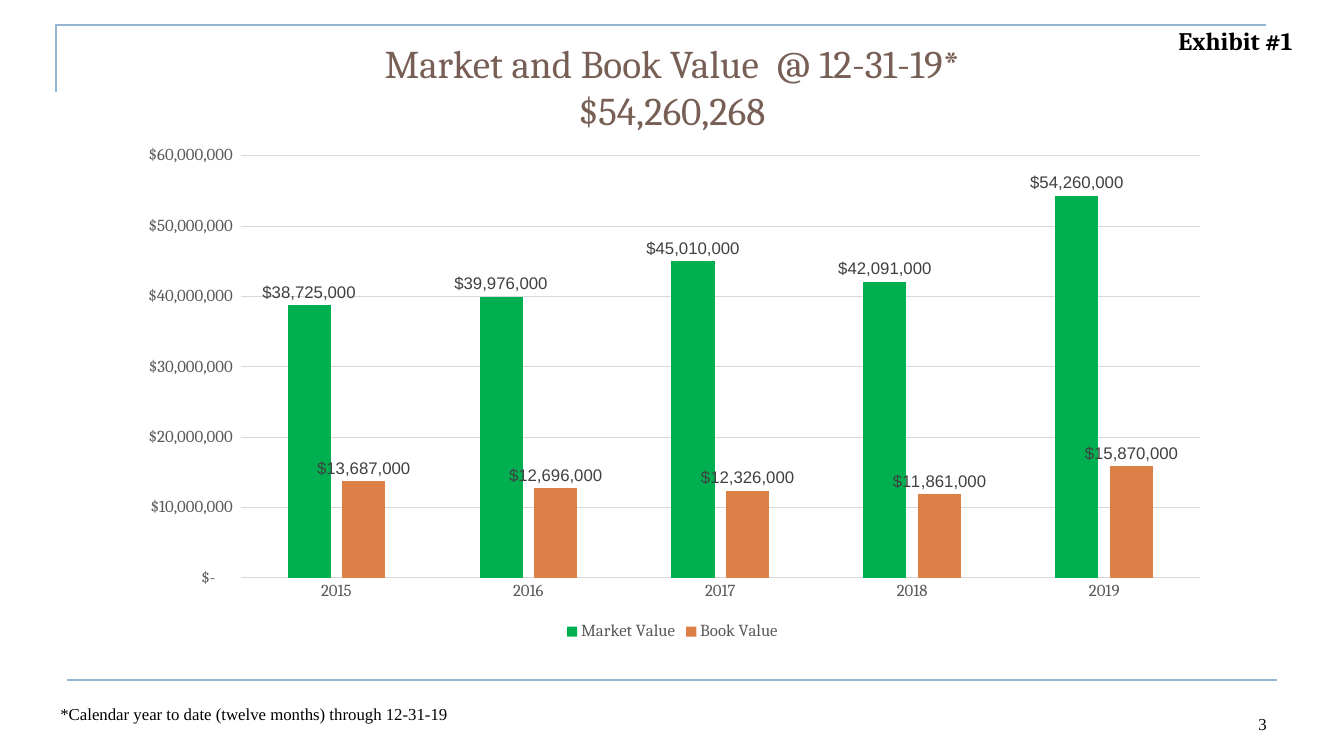
from dataclasses import dataclass

from pptx import Presentation
from pptx.chart.data import CategoryChartData
from pptx.dml.color import RGBColor
from pptx.enum.chart import XL_CHART_TYPE, XL_LABEL_POSITION, XL_LEGEND_POSITION, XL_TICK_MARK
from pptx.enum.shapes import MSO_CONNECTOR
from pptx.enum.text import MSO_ANCHOR, PP_ALIGN
from pptx.oxml.xmlchemy import OxmlElement
from pptx.util import Inches, Pt

COLS, ROWS = 160, 90
WIDTH, HEIGHT = Inches(13.33), Inches(7.5)

BLUE = RGBColor(0x94, 0xB6, 0xD2)
BROWN = RGBColor(0x77, 0x5F, 0x55)
BLACK = RGBColor(0x00, 0x00, 0x00)
GREEN = RGBColor(0x00, 0xB0, 0x50)
ORANGE = RGBColor(0xDD, 0x80, 0x47)
AXIS_GREY = RGBColor(0x59, 0x59, 0x59)
LABEL_GREY = RGBColor(0x40, 0x40, 0x40)
GRID_GREY = RGBColor(0xD9, 0xD9, 0xD9)

AXIS_FORMAT = '_("$"* #,##0_);_("$"* \\(#,##0\\);_("$"* "-"??_);_(@_)'
LABEL_FORMAT = '"$"#,##0'
YEARS = ["2015", "2016", "2017", "2018", "2019"]


@dataclass
class Box:
    """A rectangle in grid columns and rows."""
    left: float
    top: float
    width: float
    height: float

    def emu(self) -> tuple[int, int, int, int]:
        return col(self.left), row(self.top), col(self.width), row(self.height)


@dataclass
class Caption:
    text: str
    box: Box
    size: int
    font: str
    color: RGBColor = BLACK
    bold: bool = False
    align: PP_ALIGN = PP_ALIGN.LEFT
    anchor: MSO_ANCHOR = MSO_ANCHOR.TOP


@dataclass
class ValueSeries:
    name: str
    thousands: list[int]
    color: RGBColor


CAPTIONS = [
    Caption("Market and Book Value  @ 12-31-19*\v$54,260,268", Box(26, 4.1, 108, 14.6),
            28, "Cambria", BROWN, align=PP_ALIGN.CENTER),
    Caption("3", Box(114.7, 82, 37.3, 6), 12, "Times New Roman",
            align=PP_ALIGN.RIGHT, anchor=MSO_ANCHOR.BOTTOM),
    Caption("Exhibit #1", Box(139.1, 2.4, 16.9, 4.8), 18, "Cambria", bold=True),
    Caption("*Calendar year to date (twelve months) through 12-31-19",
            Box(6, 83.2, 75, 3.6), 12, "Times New Roman"),
]
SERIES = [
    ValueSeries("Market Value", [38725, 39976, 45010, 42091, 54260], GREEN),
    ValueSeries("Book Value", [13687, 12696, 12326, 11861, 15870], ORANGE),
]
CHART_BOX = Box(14.6, 16.2, 130.9, 60.6)


def col(n: float) -> int:
    return round(WIDTH * n / COLS)


def row(n: float) -> int:
    return round(HEIGHT * n / ROWS)


def style_font(font, size: int, name: str, color: RGBColor, bold: bool = False) -> None:
    font.size, font.name, font.bold = Pt(size), name, bold
    font.color.rgb = color


def style_line(line, color: RGBColor, width: float) -> None:
    line.color.rgb = color
    line.width = Pt(width)


def add_frame_lines(shapes) -> None:
    """Draw the corner bracket at the top and the rule above the footer."""
    builder = shapes.build_freeform(col(6.7), row(11), scale=1.0)
    builder.add_line_segments([(col(6.7), row(3)), (col(150.7), row(3))], close=False)
    bracket = builder.convert_to_shape()
    bracket.shadow.inherit = False
    bracket.fill.background()
    style_line(bracket.line, BLUE, 1.5)

    rule = shapes.add_connector(MSO_CONNECTOR.STRAIGHT, col(8), row(81), col(152), row(81))
    style_line(rule.line, BLUE, 1.5)
    rule._element.spPr.append(OxmlElement("a:effectLst"))


def add_caption(shapes, caption: Caption) -> None:
    tf = shapes.add_textbox(*caption.box.emu()).text_frame
    tf.word_wrap = True
    tf.vertical_anchor = caption.anchor
    tf.text = caption.text
    p = tf.paragraphs[0]
    p.alignment = caption.align
    for r in p.runs:
        style_font(r.font, caption.size, caption.font, caption.color, caption.bold)


def style_axes(chart) -> None:
    for axis in (chart.category_axis, chart.value_axis):
        axis.major_tick_mark = axis.minor_tick_mark = XL_TICK_MARK.NONE
        style_font(axis.tick_labels.font, 12, "Cambria", AXIS_GREY)
    style_line(chart.category_axis.format.line, GRID_GREY, 0.75)

    values = chart.value_axis
    values.minimum_scale, values.maximum_scale, values.major_unit = 0, 60_000_000, 10_000_000
    values.format.line.fill.background()
    style_line(values.major_gridlines.format.line, GRID_GREY, 0.75)
    values.tick_labels.number_format = AXIS_FORMAT
    values.tick_labels.number_format_is_linked = False


def add_value_chart(shapes) -> None:
    data = CategoryChartData()
    data.categories = YEARS
    for s in SERIES:
        data.add_series(s.name, [v * 1000 for v in s.thousands])
    chart = shapes.add_chart(XL_CHART_TYPE.COLUMN_CLUSTERED, *CHART_BOX.emu(), data).chart
    style_font(chart.font, 10, "Arial", BLACK)
    chart.has_title = False
    chart.has_legend = True
    chart.legend.position = XL_LEGEND_POSITION.BOTTOM
    chart.legend.include_in_layout = False
    style_font(chart.legend.font, 12, "Cambria", AXIS_GREY)
    style_axes(chart)

    plot = chart.plots[0]
    plot.gap_width, plot.overlap, plot.vary_by_categories = 219, -27, False
    for s, columns in zip(SERIES, plot.series):
        columns.format.fill.solid()
        columns.format.fill.fore_color.rgb = s.color
        labels = columns.data_labels
        labels.show_value = True
        labels.position = XL_LABEL_POSITION.OUTSIDE_END
        labels.number_format = LABEL_FORMAT
        labels.number_format_is_linked = False
        style_font(labels.font, 12, "Arial", LABEL_GREY)


def main() -> None:
    prs = Presentation()
    prs.slide_width, prs.slide_height = WIDTH, HEIGHT
    shapes = prs.slides.add_slide(prs.slide_layouts[6]).shapes
    add_frame_lines(shapes)
    for caption in CAPTIONS:
        add_caption(shapes, caption)
    add_value_chart(shapes)
    prs.save("out.pptx")


if __name__ == "__main__":
    main()
